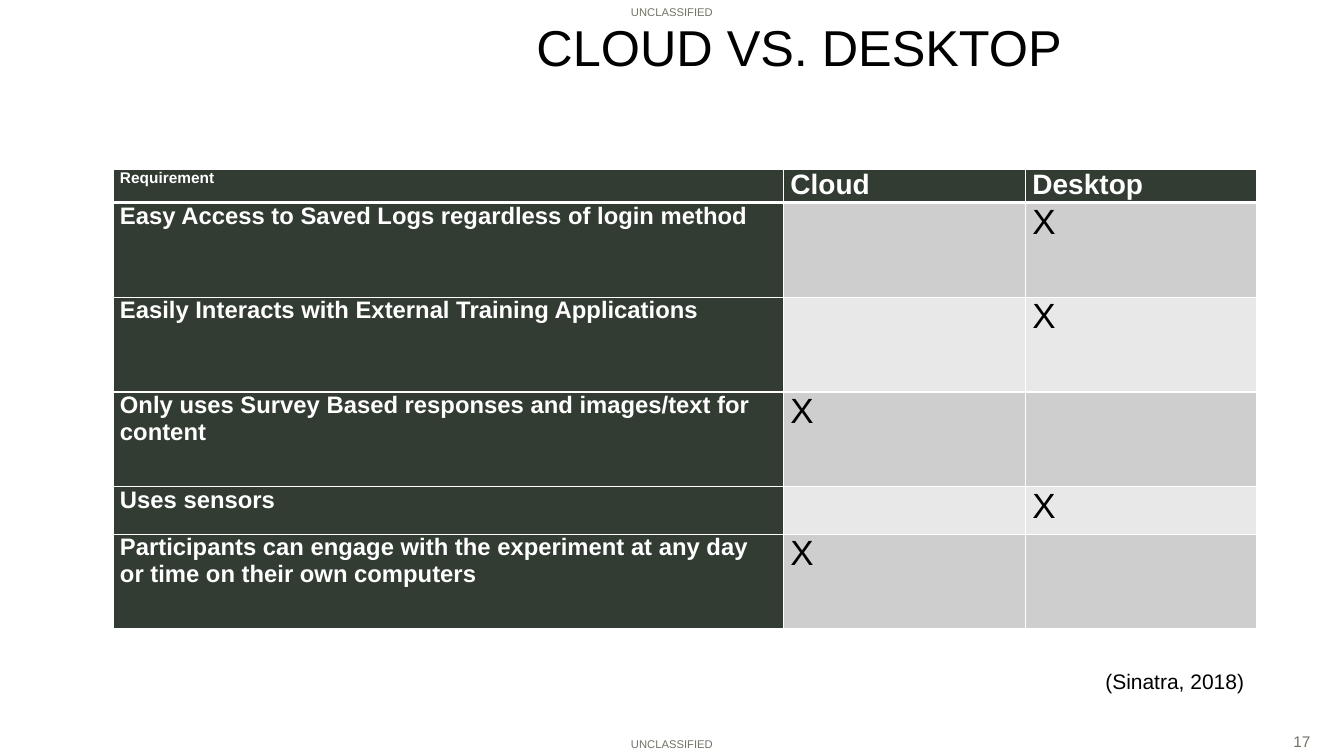
from dataclasses import dataclass

from lxml.etree import SubElement
from pptx import Presentation
from pptx.dml.color import RGBColor
from pptx.enum.text import MSO_ANCHOR, MSO_AUTO_SIZE, PP_ALIGN
from pptx.oxml.ns import qn
from pptx.shapes.base import BaseShape
from pptx.slide import Slide
from pptx.table import _Cell as Cell
from pptx.text.text import TextFrame
from pptx.util import Inches, Pt

HUES = {
    "black": "000000",
    "white": "FFFFFF",
    "gray": "717365",
    "green": "333C33",
    "dark": "CECECE",
    "light": "E8E8E8",
}
COLS = (6.65, 2.4, 2.29)
HEADS = (("Requirement", 11), ("Cloud", 20), ("Desktop", 20))


@dataclass
class Label:
    text: str
    box: tuple[float, float, float, float]
    size: int
    align: PP_ALIGN
    anchor: MSO_ANCHOR


@dataclass
class Need:
    text: str
    cloud: bool
    height: float = 0.94


LABELS = (
    Label("UNCLASSIFIED", (2, 7.26, 9.33, 0.24), 8, PP_ALIGN.CENTER, MSO_ANCHOR.BOTTOM),
    Label("UNCLASSIFIED", (0, 0, 13.33, 0.24), 8, PP_ALIGN.CENTER, MSO_ANCHOR.BOTTOM),
    Label("17", (12.73, 7.21, 0.61, 0.29), 11, PP_ALIGN.LEFT, MSO_ANCHOR.TOP),
)
TITLE = Label("CLOUD VS. DESKTOP", (5.22, 0.17, 8.11, 0.58), 36, PP_ALIGN.LEFT, MSO_ANCHOR.MIDDLE)
CITE = Label("(Sinatra, 2018)", (0.44, 6.58, 12, 0.35), 15, PP_ALIGN.RIGHT, MSO_ANCHOR.MIDDLE)
NEEDS = (
    Need("Easy Access to Saved Logs regardless of login method", False),
    Need("Easily Interacts with External Training Applications", False),
    Need("Only uses Survey Based responses and images/text for content", True),
    Need("Uses sensors", False, 0.47),
    Need("Participants can engage with the experiment at any day or time on their own computers", True),
)


def style(frame: TextFrame, size: int, hue: str, bold: bool = False) -> None:
    for run in frame.paragraphs[0].runs:
        run.font.name = "Arial"
        run.font.size = Pt(size)
        run.font.bold = bold
        run.font.color.rgb = RGBColor.from_string(HUES[hue])


def write(shape: BaseShape, label: Label, hue: str) -> None:
    shape.left, shape.top, shape.width, shape.height = map(Inches, label.box)
    frame = shape.text_frame
    frame.text = label.text
    frame.word_wrap = True
    frame.auto_size = MSO_AUTO_SIZE.NONE
    frame.vertical_anchor = label.anchor
    frame.paragraphs[0].alignment = label.align
    style(frame, label.size, hue)


def edge(cell: Cell, top: int, base: int) -> None:
    props = cell._tc.get_or_add_tcPr()
    for side, width in (("L", 1), ("R", 1), ("T", top), ("B", base)):
        line = SubElement(props, qn(f"a:ln{side}"), w=str(Pt(width)))
        fill = SubElement(line, qn("a:solidFill"))
        SubElement(fill, qn("a:srgbClr"), val=HUES["white"])


def paint(cell: Cell, text: str, size: int, hue: str, fill: str, bold: bool) -> None:
    cell.fill.solid()
    cell.fill.fore_color.rgb = RGBColor.from_string(HUES[fill])
    cell.margin_left = cell.margin_right = Inches(0.07)
    cell.margin_top = cell.margin_bottom = 0
    if text:
        cell.text_frame.text = text
        cell.text_frame.paragraphs[0].space_after = Pt(12)
        style(cell.text_frame, size, hue, bold)


def grid(slide: Slide) -> None:
    highs = [0.33] + [need.height for need in NEEDS]
    table = slide.shapes.add_table(
        len(highs), len(COLS), Inches(1.12), Inches(1.68),
        Inches(sum(COLS)), Inches(sum(highs)),
    ).table
    for col, width in zip(table.columns, COLS):
        col.width = Inches(width)
    for num, (row, high) in enumerate(zip(table.rows, highs)):
        row.height = Inches(high)
        for cell in row.cells:
            edge(cell, 3 if num == 1 else 1, 3 if num == 0 else 1)
    for col, (text, size) in enumerate(HEADS):
        paint(table.cell(0, col), text, size, "white", "green", True)
    for row, need in enumerate(NEEDS, 1):
        paint(table.cell(row, 0), need.text, 17, "white", "green", True)
        band = "dark" if row % 2 else "light"
        for col, mark in ((1, need.cloud), (2, not need.cloud)):
            paint(table.cell(row, col), "X" if mark else "", 25, "black", band, False)


def main() -> None:
    deck = Presentation()
    deck.slide_width, deck.slide_height = Inches(13.33), Inches(7.5)
    slide = deck.slides.add_slide(deck.slide_layouts[1])
    for label in LABELS:
        write(slide.shapes.add_textbox(0, 0, 0, 0), label, "gray")
    write(slide.shapes.title, TITLE, "black")
    body = slide.placeholders[1]
    write(body, CITE, "black")
    para = body.text_frame.paragraphs[0]
    para.space_before = Pt(0)
    props = para._p.get_or_add_pPr()
    props.set("marL", str(Inches(0.38)))
    props.set("indent", str(-Inches(0.38)))
    SubElement(props, qn("a:buNone"))
    grid(slide)
    deck.save("out.pptx")


if __name__ == "__main__":
    main()
